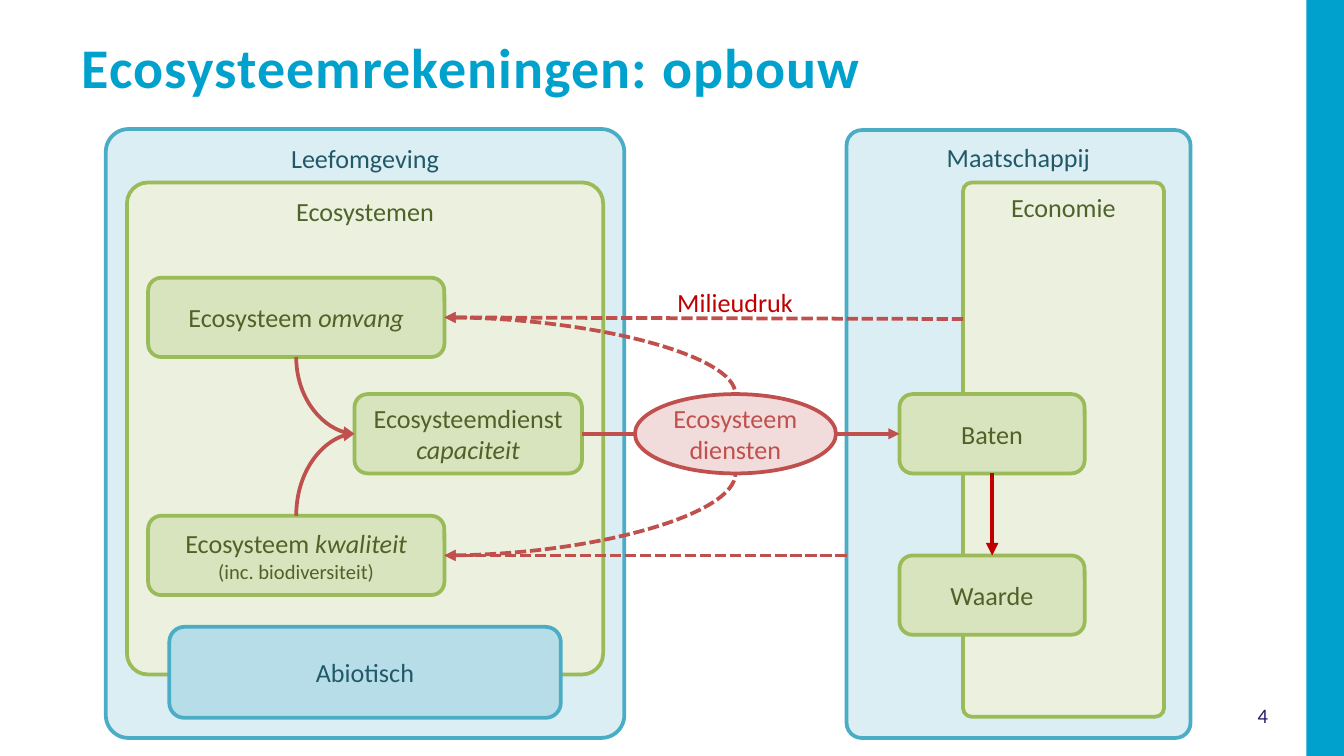
from pptx import Presentation
from pptx import util as u
from pptx.dml.color import RGBColor
from pptx.enum import dml, shapes, text
from pptx.oxml.ns import qn
from lxml import etree

CYAN = RGBColor(0x00, 0xA1, 0xCD)
NAVY = RGBColor(0x27, 0x1D, 0x6C)
RED = RGBColor(0xC0, 0x50, 0x4D)
DARK_RED = RGBColor(0xC0, 0x00, 0x00)
PINK = RGBColor(0xF2, 0xDC, 0xDB)
BLUE = RGBColor(0x4B, 0xAC, 0xC6)
PALE_BLUE = RGBColor(0xDB, 0xEE, 0xF4)
MID_BLUE = RGBColor(0xB7, 0xDE, 0xE8)
DARK_BLUE = RGBColor(0x21, 0x59, 0x68)
GREEN = RGBColor(0x9B, 0xBB, 0x59)
PALE_GREEN = RGBColor(0xEB, 0xF1, 0xDE)
MID_GREEN = RGBColor(0xD7, 0xE4, 0xBD)
DARK_GREEN = RGBColor(0x4F, 0x62, 0x28)

# fill, line, text
BLUE_PANEL = (PALE_BLUE, BLUE, DARK_BLUE)
GREEN_PANEL = (PALE_GREEN, GREEN, DARK_GREEN)
BLUE_BOX = (MID_BLUE, BLUE, DARK_BLUE)
GREEN_BOX = (MID_GREEN, GREEN, DARK_GREEN)
RED_OVAL = (PINK, RED, RED)

TOP, LEFT, BOTTOM, RIGHT = range(4)
OVAL_BOTTOM = 4
BOX_HEIGHT = 1.5
ROW_EXTENT, ROW_SERVICE, ROW_CONDITION, ROW_VALUE = 5.25, 7.45, 9.75, 10.5
WIDTH, HEIGHT = 25.4, 14.29


class Diagram:
    font = "Calibri"
    size = 14
    line_width = 2

    def __init__(self, slide):
        self.slide = slide

    def set_text(self, frame, paragraphs, color, align=text.PP_ALIGN.CENTER,
                 anchor=text.MSO_ANCHOR.MIDDLE):
        """Fill a frame with paragraphs, each a list of (text, font options)."""
        frame.word_wrap = True
        frame.vertical_anchor = anchor
        for index, runs in enumerate(paragraphs):
            paragraph = frame.add_paragraph() if index else frame.paragraphs[0]
            paragraph.alignment = align
            for words, options in runs:
                run = paragraph.add_run()
                run.text = words
                run.font.name = self.font
                run.font.size = u.Pt(options.get("size", self.size))
                run.font.bold = options.get("bold", False)
                run.font.italic = options.get("italic", False)
                run.font.color.rgb = color

    def label(self, place, words, color, wrap=True, align=text.PP_ALIGN.LEFT,
              anchor=text.MSO_ANCHOR.TOP, **options):
        box = self.slide.shapes.add_textbox(*map(u.Cm, place))
        self.set_text(box.text_frame, [[(words, options)]], color, align, anchor)
        box.text_frame.word_wrap = wrap
        return box

    def stripe(self, place, color):
        shape = self.slide.shapes.add_shape(
            shapes.MSO_SHAPE.RECTANGLE, *map(u.Cm, place))
        shape.shadow.inherit = False
        shape.fill.solid()
        shape.fill.fore_color.rgb = color
        shape.line.fill.background()

    def box(self, place, style, *paragraphs, kind=shapes.MSO_SHAPE.ROUNDED_RECTANGLE,
            anchor=text.MSO_ANCHOR.MIDDLE):
        fill, line, color = style
        shape = self.slide.shapes.add_shape(kind, *map(u.Cm, place))
        shape.shadow.inherit = False
        shape.fill.solid()
        shape.fill.fore_color.rgb = fill
        shape.line.color.rgb = line
        shape.line.width = u.Pt(self.line_width)
        self.set_text(shape.text_frame, paragraphs, color, anchor=anchor)
        return shape

    def panel(self, place, style, words):
        shape = self.box(place, style, [(words, {})], anchor=text.MSO_ANCHOR.TOP)
        shape.adjustments[0] = 0.044
        return shape

    def oval(self, place, style, words):
        shape = self.box(place, style, [(words, {})], kind=shapes.MSO_SHAPE.OVAL)
        frame = shape.text_frame
        frame.margin_left = frame.margin_right = u.Cm(0.1)
        frame.margin_top = frame.margin_bottom = u.Cm(0.1)
        return shape

    def connector(self, kind, start, end, arrow, color=RED, width=None, dashed=False):
        """Join two ends, each an (x, y) point or a (shape, side) pair."""
        points = [end_point if isinstance(end_point[0], (int, float)) else (0, 0)
                  for end_point in (start, end)]
        line = self.slide.shapes.add_connector(
            kind, *(u.Cm(value) for point in points for value in point))
        for end_point, join in ((start, line.begin_connect), (end, line.end_connect)):
            if not isinstance(end_point[0], (int, float)):
                join(*end_point)
        line.line.color.rgb = color
        line.line.width = u.Pt(width or self.line_width)
        if dashed:
            line.line.dash_style = dml.MSO_LINE.SQUARE_DOT
        properties = line.element.spPr
        etree.SubElement(properties.find(qn("a:ln")), qn(arrow), type="triangle")
        etree.SubElement(properties, qn("a:effectLst"))
        return line

    def arrow(self, start, end, **style):
        return self.connector(shapes.MSO_CONNECTOR.STRAIGHT, start, end,
                              "a:tailEnd", **style)

    def curve(self, target, source, **style):
        """Quarter bend that leaves the target sideways; the arrowhead is at the target."""
        line = self.connector(shapes.MSO_CONNECTOR.CURVE, target, source,
                              "a:headEnd", **style)
        line.element.spPr.find(qn("a:prstGeom")).set("prst", "curvedConnector2")
        return line


def main():
    presentation = Presentation()
    presentation.slide_width, presentation.slide_height = u.Cm(WIDTH), u.Cm(HEIGHT)
    diagram = Diagram(presentation.slides.add_slide(presentation.slide_layouts[6]))

    diagram.stripe((24.69, 0, 0.71, HEIGHT), CYAN)
    diagram.label((23.05, 13.08, 1.63, 0.9), "4", NAVY, size=11,
                  align=text.PP_ALIGN.CENTER, anchor=text.MSO_ANCHOR.MIDDLE)
    title = diagram.label((1.3, 0.5, 21.2, 1.6), "Ecosysteemrekeningen: opbouw",
                          CYAN, size=30, bold=True)
    title.element.find(".//" + qn("a:rPr")).set("spc", "60")

    diagram.panel((2, 2.44, 9.8, 11.51), BLUE_PANEL, "Leefomgeving")
    diagram.panel((2.4, 3.45, 9, 9.3), GREEN_PANEL, "Ecosystemen")
    italic = {"italic": True}
    extent = diagram.box((2.8, ROW_EXTENT, 5.6, BOX_HEIGHT), GREEN_BOX,
                         [("Ecosysteem ", {}), ("omvang", italic)])
    condition = diagram.box((2.8, ROW_CONDITION, 5.6, BOX_HEIGHT), GREEN_BOX,
                            [("Ecosysteem ", {}), ("kwaliteit", italic)],
                            [("(inc. biodiversiteit)", {"size": 11})])
    capacity = diagram.box((6.7, ROW_SERVICE, 4.3, BOX_HEIGHT), GREEN_BOX,
                           [("Ecosysteemdienst ", {}), ("capaciteit", italic)])
    diagram.curve((capacity, LEFT), (extent, BOTTOM))
    diagram.curve((capacity, LEFT), (condition, TOP))
    diagram.box((3.2, 11.85, 7.4, 1.72), BLUE_BOX, [("Abiotisch", {})])

    diagram.panel((16, 2.46, 6.5, 11.49), BLUE_PANEL, "Maatschappij")
    diagram.panel((18.2, 3.45, 3.8, 10.1), GREEN_PANEL, "Economie")
    benefits, value = (
        diagram.box((17, top, 3.5, BOX_HEIGHT), GREEN_BOX, [(words, {})])
        for words, top in (("Baten", ROW_SERVICE), ("Waarde", ROW_VALUE)))

    diagram.arrow((capacity, RIGHT), (benefits, LEFT))
    services = diagram.oval((12, ROW_SERVICE, 3.8, BOX_HEIGHT), RED_OVAL,
                            "Ecosysteem diensten")
    feedback = diagram.curve((condition, RIGHT), (services, BOTTOM), dashed=True)
    # An oval has eight connection sites, so its bottom has another number.
    feedback.element.nvCxnSpPr.cNvCxnSpPr.endCxn.idx = OVAL_BOTTOM
    diagram.arrow((16, 10.5), (condition, RIGHT), dashed=True)
    diagram.arrow((18.2, 6.03), (extent, RIGHT), dashed=True)
    diagram.curve((extent, RIGHT), (services, TOP), dashed=True)
    diagram.label((12.55, 5.28, 2.72, 0.86), "Milieudruk", DARK_RED, wrap=False)
    diagram.arrow((benefits, BOTTOM), (value, TOP), color=DARK_RED, width=2.25)

    presentation.save("out.pptx")


if __name__ == "__main__":
    main()
